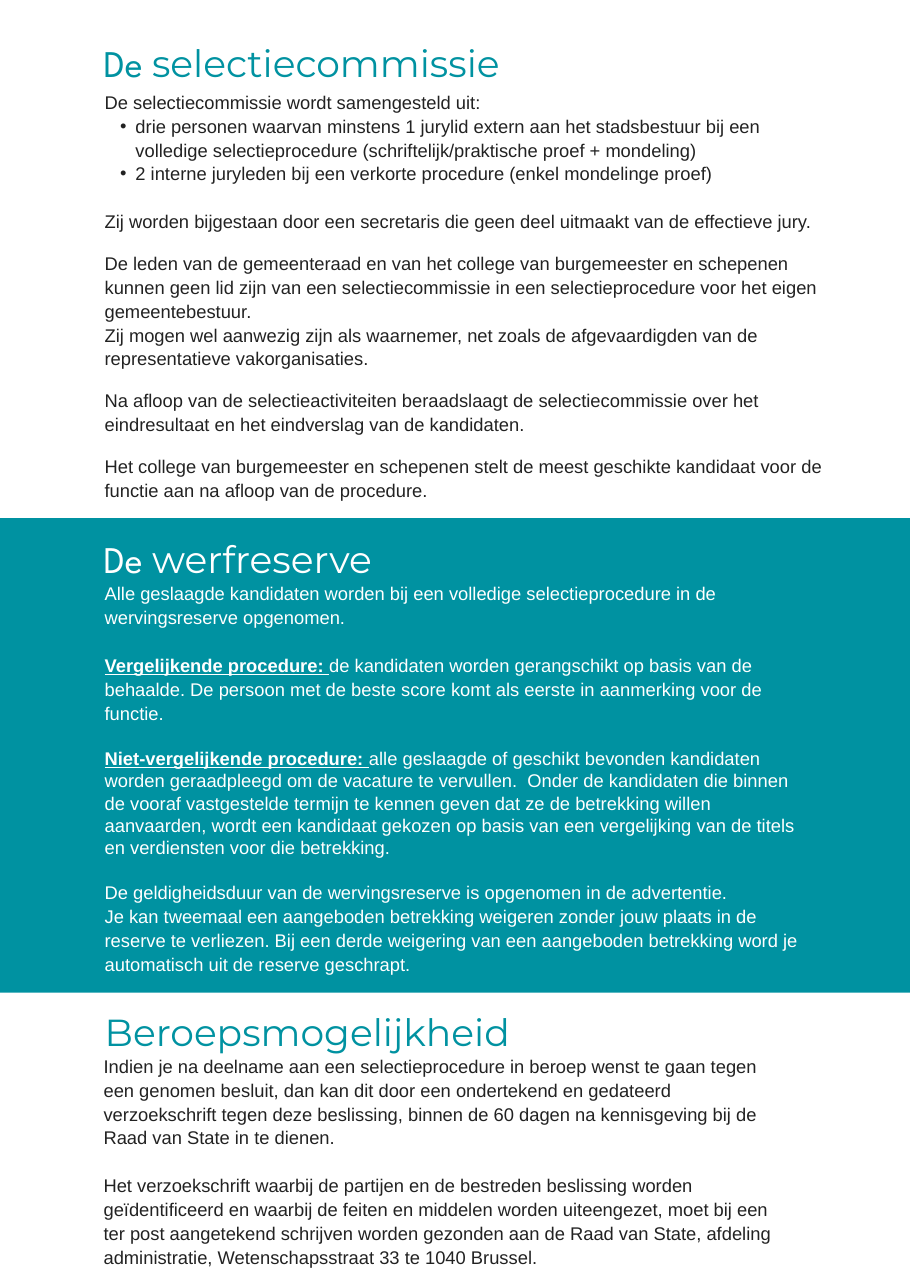
from dataclasses import dataclass

from lxml.etree import SubElement
from pptx import Presentation
from pptx.dml.color import RGBColor
from pptx.enum.shapes import MSO_SHAPE
from pptx.enum.text import MSO_AUTO_SIZE
from pptx.oxml.ns import qn
from pptx.util import Pt

PX = 9144
TEAL = RGBColor(0x00, 0x92, 0xA1)
WHITE = RGBColor(0xFF, 0xFF, 0xFF)
INK = RGBColor(0x22, 0x22, 0x22)
WIDE_GAP, GAP, NARROW_GAP = 15.6, 14.4, 11.7


@dataclass
class Para:
    text: str
    before: float = 0
    lead: str = ""
    bullet: bool = False
    line: float = 15.6


COMMISSION = [
    Para("De selectiecommissie wordt samengesteld uit:"),
    Para("drie personen waarvan minstens 1 jurylid extern aan het stadsbestuur bij een "
         "volledige selectieprocedure (schriftelijk/praktische proef + mondeling)", bullet=True),
    Para("2 interne juryleden bij een verkorte procedure (enkel mondelinge proef)", bullet=True),
    Para("Zij worden bijgestaan door een secretaris die geen deel uitmaakt van de "
         "effectieve jury.", WIDE_GAP),
    Para("De leden van de gemeenteraad en van het college van burgemeester en schepenen "
         "kunnen geen lid zijn van een selectiecommissie in een selectieprocedure voor het "
         "eigen", NARROW_GAP),
    Para("gemeentebestuur."),
    Para("Zij mogen wel aanwezig zijn als waarnemer, net zoals de afgevaardigden van de "
         "representatieve vakorganisaties."),
    Para("Na afloop van de selectieactiviteiten beraadslaagt de selectiecommissie over het",
         NARROW_GAP),
    Para("eindresultaat en het eindverslag van de kandidaten."),
    Para("Het college van burgemeester en schepenen stelt de meest geschikte kandidaat voor de "
         "functie aan na afloop van de procedure.", NARROW_GAP),
]

RESERVE = [
    Para("Alle geslaagde kandidaten worden bij een volledige selectieprocedure in de "
         "wervingsreserve opgenomen."),
    Para("de kandidaten worden gerangschikt op basis van de behaalde. De persoon met de beste "
         "score komt als eerste in aanmerking voor de functie.", WIDE_GAP,
         lead="Vergelijkende procedure: "),
    Para("alle geslaagde of geschikt bevonden kandidaten worden geraadpleegd om de vacature te "
         "vervullen.  Onder de kandidaten die binnen de vooraf vastgestelde termijn te kennen "
         "geven dat ze de betrekking willen aanvaarden, wordt een kandidaat gekozen op basis "
         "van een vergelijking van de titels en verdiensten voor die betrekking.", WIDE_GAP,
         lead="Niet-vergelijkende procedure: ", line=14.4),
    Para("De geldigheidsduur van de wervingsreserve is opgenomen in de advertentie.", GAP),
    Para("Je kan tweemaal een aangeboden betrekking weigeren zonder jouw plaats in de reserve "
         "te verliezen. Bij een derde weigering van een aangeboden betrekking word je "
         "automatisch uit de reserve geschrapt."),
]

APPEAL = [
    Para("Indien je na deelname aan een selectieprocedure in beroep wenst te gaan tegen een "
         "genomen besluit, dan kan dit door een ondertekend en gedateerd verzoekschrift tegen "
         "deze beslissing, binnen de 60 dagen na kennisgeving bij de Raad van State in te "
         "dienen."),
    Para("Het verzoekschrift waarbij de partijen en de bestreden beslissing worden "
         "geïdentificeerd en waarbij de feiten en middelen worden uiteengezet, moet bij een "
         "ter post aangetekend schrijven worden gezonden aan de Raad van State, afdeling "
         "administratie, Wetenschapsstraat 33 te 1040 Brussel.", WIDE_GAP),
]


def add_band(s, box):
    sp = s.shapes.add_shape(MSO_SHAPE.RECTANGLE, *(v * PX for v in box))
    sp.shadow.inherit = False
    sp.fill.solid()
    sp.fill.fore_color.rgb = WHITE
    sp.line.fill.background()


def add_text_frame(s, box):
    tf = s.shapes.add_textbox(*(v * PX for v in box)).text_frame
    tf.margin_left = tf.margin_top = tf.margin_right = tf.margin_bottom = 0
    tf.word_wrap = True
    tf.auto_size = MSO_AUTO_SIZE.SHAPE_TO_FIT_TEXT
    return tf


def add_run(p, text, font, size, color, strong=False):
    r = p.add_run()
    r.text = text
    r.font.name = font
    r.font.size = Pt(size)
    r.font.color.rgb = color
    if strong:
        r.font.bold = r.font.underline = True


def add_heading(s, box, article, title, color):
    p = add_text_frame(s, box).paragraphs[0]
    p.line_spacing = Pt(32)
    if article:
        add_run(p, article, "League Spartan", 24.6, color)
    add_run(p, title, "Montserrat", 24.6, color)


def add_bullet(p):
    p.level = 1
    pPr = p._p.get_or_add_pPr()
    pPr.set("marL", str(28 * PX))
    pPr.set("indent", str(-14 * PX))
    SubElement(pPr, qn("a:buFont")).set("typeface", "Arial")
    SubElement(pPr, qn("a:buChar")).set("char", "•")


def add_body(s, box, paras, color):
    tf = add_text_frame(s, box)
    for i, para in enumerate(paras):
        p = tf.add_paragraph() if i else tf.paragraphs[0]
        if para.bullet:
            add_bullet(p)
        p.line_spacing = Pt(para.line)
        if para.before:
            p.space_before = Pt(para.before)
        if para.lead:
            add_run(p, para.lead, "Arial", 12, color, strong=True)
        add_run(p, para.text, "Arial", 12, color)


def commission_section(s, x, y, w, h):
    add_band(s, (x, y, w, h))
    add_heading(s, (x + 94, y + 33, 615, 44), "De ", "selectiecommissie", TEAL)
    add_body(s, (x + 95, y + 81, 660, h - 85), COMMISSION, INK)


def reserve_section(s, x, y, w, h):
    add_heading(s, (x + 94, y + 13, 615, 44), "De ", "werfreserve", WHITE)
    add_body(s, (x + 95, y + 57, 638, h - 65), RESERVE, WHITE)


def appeal_section(s, x, y, w, h):
    add_band(s, (x, y, w, h))
    add_heading(s, (x + 95, y + 11, 615, 43), "", "Beroepsmogelijkheid", TEAL)
    add_body(s, (x + 94, y + 55, 615, h - 68), APPEAL, INK)


def main():
    prs = Presentation()
    prs.slide_width, prs.slide_height = 826 * PX, 1169 * PX
    s = prs.slides.add_slide(prs.slide_layouts[6])
    s.background.fill.solid()
    s.background.fill.fore_color.rgb = TEAL
    commission_section(s, 0, 0, 826, 470)
    reserve_section(s, 0, 470, 826, 431)
    appeal_section(s, 0, 901, 826, 268)
    prs.save("out.pptx")


if __name__ == "__main__":
    main()
